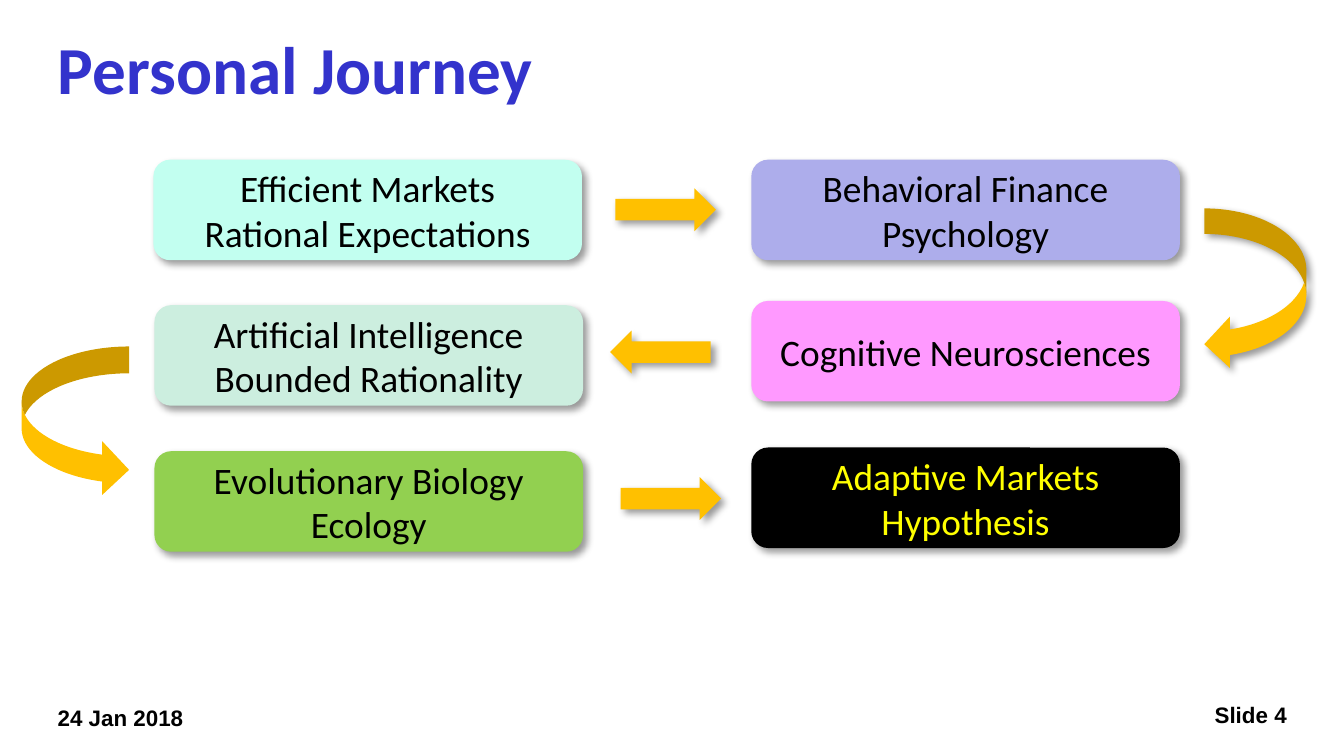
from lxml import etree
from pptx import Presentation
from pptx import util as u
from pptx.dml.color import RGBColor
from pptx.enum import shapes, text
from pptx.oxml import ns

COLORS = {
    "title": "3333CC", "black": "000000", "yellow": "FFFF00", "arrow": "FFC000",
    "mint": "C2FFF0", "lavender": "ADADEB", "pink": "FF99FF",
    "sage": "CCEEDF", "green": "92D050",
}
SHAPE = shapes.MSO_SHAPE
ALIGN = text.PP_ALIGN


def add_block(kind, left, top, width, height, fill, shadow=True):
    shape = slide.shapes.add_shape(kind, u.Cm(left), u.Cm(top), u.Cm(width), u.Cm(height))
    shape.fill.solid()
    shape.fill.fore_color.rgb = RGBColor.from_string(COLORS[fill])
    shape.line.fill.background()
    shape.shadow.inherit = False
    if shadow:
        effects = shape._element.spPr.find(ns.qn("a:effectLst"))
        outer = etree.SubElement(effects, ns.qn("a:outerShdw"), blurRad=str(u.Pt(4)),
                                 dist=str(u.Pt(3)), dir="2700000", algn="tl", rotWithShape="0")
        color = etree.SubElement(outer, ns.qn("a:srgbClr"), val=COLORS["black"])
        etree.SubElement(color, ns.qn("a:alpha"), val="40000")
    return shape


def write(shape, content, font, size, color, align, bold=False):
    shape.text_frame.text = content
    for paragraph in shape.text_frame.paragraphs:
        paragraph.alignment = align
        for run in paragraph.runs:
            run.font.name = font
            run.font.size = u.Pt(size)
            run.font.bold = bold
            run.font.color.rgb = RGBColor.from_string(COLORS[color])


presentation = Presentation()
presentation.slide_width = u.Cm(25.4)
presentation.slide_height = u.Cm(14.29)
slide = presentation.slides.add_slide(presentation.slide_layouts[5])

title = slide.shapes.title
title.left, title.top, title.width, title.height = u.Cm(0.84), u.Cm(0.79), u.Cm(21.95), u.Cm(0.97)
write(title, "Personal Journey", "Calibri", 36, "title", ALIGN.LEFT, True)
title.text_frame.vertical_anchor = text.MSO_ANCHOR.MIDDLE
title.text_frame.auto_size = text.MSO_AUTO_SIZE.NONE

cards = [
    (2.9, 3.02, "mint", "black", "Efficient Markets\nRational Expectations"),
    (14.2, 3.02, "lavender", "black", "Behavioral Finance\nPsychology"),
    (14.2, 5.69, "pink", "black", "Cognitive Neurosciences"),
    (2.92, 5.77, "sage", "black", "Artificial Intelligence Bounded Rationality"),
    (2.92, 8.53, "green", "black", "Evolutionary Biology Ecology"),
    (14.2, 8.46, "black", "yellow", "Adaptive Markets Hypothesis"),
]
for left, top, fill, color, label in cards:
    card = add_block(SHAPE.ROUNDED_RECTANGLE, left, top, 8.1, 1.9, fill)
    write(card, label, "Calibri", 20, color, ALIGN.CENTER)
    card.text_frame.vertical_anchor = text.MSO_ANCHOR.MIDDLE
    card.text_frame.word_wrap = "\n" not in label

for left, top, rotation in [(11.63, 3.56, 0), (11.53, 6.25, 180), (11.73, 9.02, 0)]:
    arrow = add_block(SHAPE.RIGHT_ARROW, left, top, 1.9, 0.81, "arrow")
    arrow.rotation = rotation

add_block(SHAPE.CURVED_LEFT_ARROW, 22.76, 3.94, 1.93, 3.05, "arrow")
add_block(SHAPE.CURVED_RIGHT_ARROW, 0.41, 6.55, 2.03, 2.84, "arrow", shadow=False)

footers = [
    (18.85, 13.13, 5.72, "Slide 4", ALIGN.RIGHT),
    (0.84, 13.18, 8.69, "24 Jan 2018", ALIGN.LEFT),
]
for left, top, width, label, align in footers:
    footer = slide.shapes.add_textbox(u.Cm(left), u.Cm(top), u.Cm(width), u.Cm(0.66))
    footer.text_frame.word_wrap = True
    write(footer, label, "Arial", 12, "black", align, True)

presentation.save("out.pptx")
